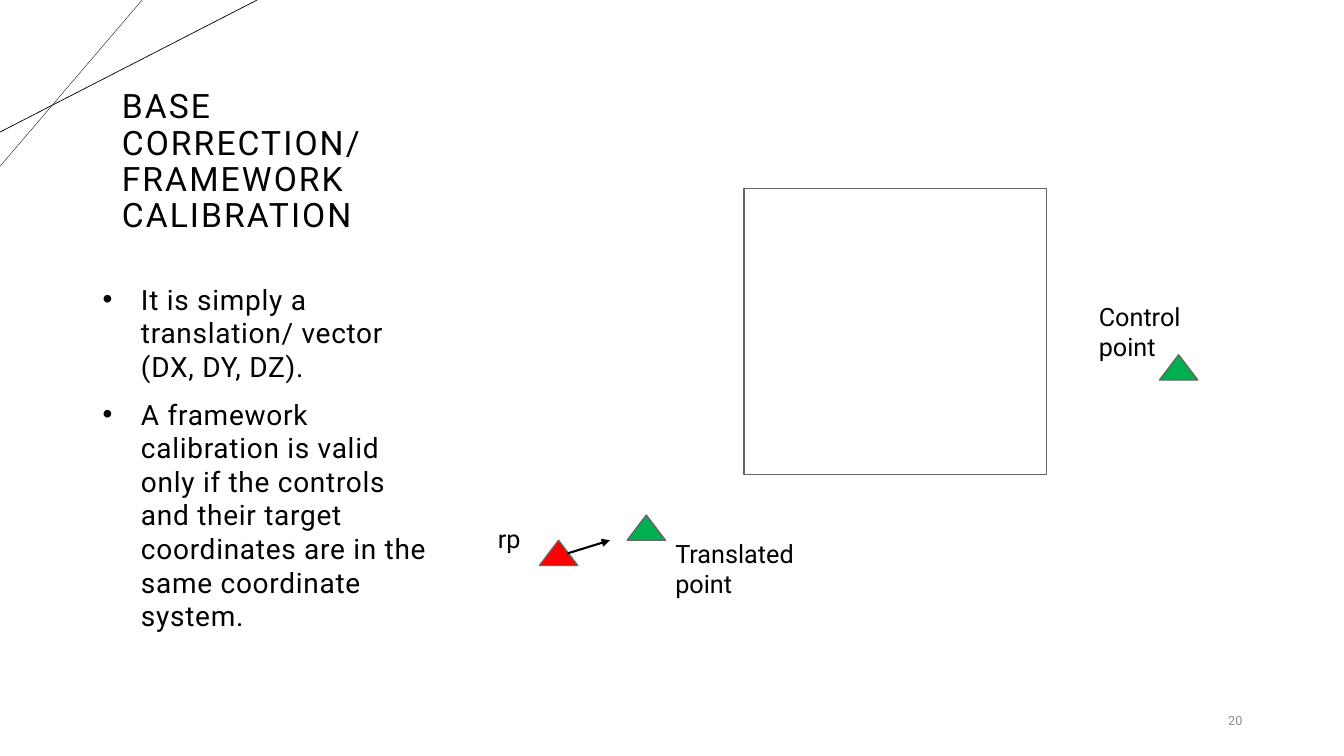
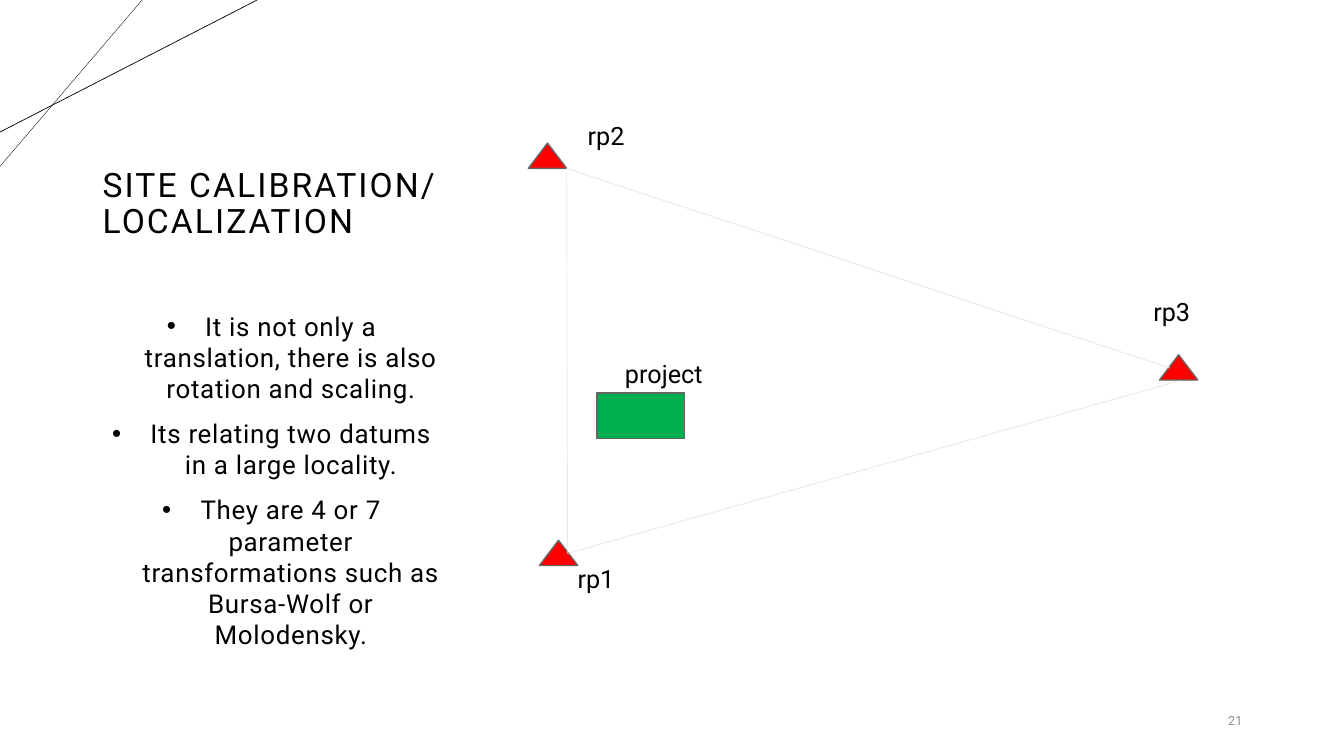
from lxml import etree
from pptx import Presentation
from pptx import util as u
from pptx.dml.color import RGBColor
from pptx.enum import shapes, text
from pptx.oxml import ns

BLACK = RGBColor(0x00, 0x00, 0x00)
WHITE = RGBColor(0xFF, 0xFF, 0xFF)
RED = RGBColor(0xFF, 0x00, 0x00)
GREEN = RGBColor(0x00, 0xB0, 0x50)
OUTLINE = RGBColor(0x66, 0x65, 0x62)
PALE = RGBColor(0xE9, 0xE6, 0xDF)
GRAY = RGBColor(0x8C, 0x8C, 0x8C)
FONT = "Roboto"
LEFT = text.PP_ALIGN.LEFT
CENTER = text.PP_ALIGN.CENTER
RIGHT = text.PP_ALIGN.RIGHT
TOP = text.MSO_ANCHOR.TOP
MIDDLE = text.MSO_ANCHOR.MIDDLE
TRIANGLE = shapes.MSO_SHAPE.ISOSCELES_TRIANGLE
RECTANGLE = shapes.MSO_SHAPE.RECTANGLE


def write(frame, lines, size=18, color=BLACK, align=LEFT, anchor=TOP,
          spacing=0, line_spacing=None, gap=0, bullet=None):
    """Fill a text frame with one formatted paragraph per line."""
    frame.word_wrap = True
    frame.vertical_anchor = anchor
    for index, line in enumerate(lines):
        para = frame.add_paragraph() if index else frame.paragraphs[0]
        if bullet:
            properties = para._p.get_or_add_pPr()
            indent = u.Inches(0.38)
            properties.set("marL", str(indent))
            properties.set("indent", str(-indent))
            etree.SubElement(properties, ns.qn("a:buFont"), typeface="Arial")
            etree.SubElement(properties, ns.qn("a:buChar"), char=bullet)
        para.alignment = align
        para.line_spacing = line_spacing
        if index:
            para.space_before = u.Pt(gap)
        span = para.add_run()
        span.text = line
        span.font.name = FONT
        span.font.size = u.Pt(size)
        span.font.color.rgb = color
        if spacing:
            span._r.get_or_add_rPr().set("spc", str(int(spacing * 100)))


class SurveyDeck:
    """Hold the deck style and the slide being drawn."""

    def __init__(self):
        """Start an empty widescreen deck."""
        self.deck = Presentation()
        self.deck.slide_width = u.Inches(13.33)
        self.deck.slide_height = u.Inches(7.5)
        self.page = None

    def start(self, number, title, left, top):
        """Add a page with corner lines, a title and its number."""
        self.page = self.deck.slides.add_slide(self.deck.slide_layouts[6])
        self.line((1.41, 0), (0, 1.65), width=0.25)
        self.line((2.55, 0), (0, 1.31), width=0.5)
        self.text(left, top, 3.55, 2.1, [title], size=24, anchor=MIDDLE,
                  spacing=1.5, line_spacing=0.9)
        self.text(11.34, 6.95, 1.08, 0.4, [str(number)], size=9, color=GRAY,
                  align=RIGHT, anchor=MIDDLE)

    def text(self, left, top, width, height, lines, **style):
        """Add a text box and return it."""
        box = self.page.shapes.add_textbox(
            u.Inches(left), u.Inches(top), u.Inches(width), u.Inches(height))
        write(box.text_frame, lines, **style)
        return box

    def bullets(self, top, height, lines, **style):
        """Add the bulleted column under the title."""
        box = self.text(0.92, top, 3.55, height, lines, bullet="•", gap=10,
                        spacing=0.5, **style)
        box.text_frame.margin_top = 0

    def label(self, left, top, width, caption, height=0.4):
        """Add a caption beside a mark."""
        self.text(left, top, width, height, [caption])

    def shape(self, kind, left, top, width, height, fill):
        """Add an outlined preset shape."""
        shape = self.page.shapes.add_shape(
            kind, u.Inches(left), u.Inches(top), u.Inches(width), u.Inches(height))
        shape.shadow.inherit = False
        shape.fill.solid()
        shape.fill.fore_color.rgb = fill
        shape.line.color.rgb = OUTLINE
        shape.line.width = u.Pt(1)

    def point(self, left, top, fill=RED):
        """Add a triangular survey mark."""
        self.shape(TRIANGLE, left, top, 0.38, 0.25, fill)

    def line(self, start, end, color=BLACK, width=0.5, arrow=False):
        """Add a straight line, with an arrowhead at its end if asked."""
        line = self.page.shapes.add_connector(
            shapes.MSO_CONNECTOR.STRAIGHT, *map(u.Inches, start + end))
        line.line.color.rgb = color
        line.line.width = u.Pt(width)
        if arrow:
            etree.SubElement(line.line._get_or_add_ln(), ns.qn("a:tailEnd"),
                             type="triangle")
        etree.SubElement(line._element.spPr, ns.qn("a:effectLst"))


def base_correction(survey):
    """Draw the base correction slide."""
    survey.start(20, "BASE CORRECTION/ FRAMEWORK CALIBRATION", 1.11, 0.56)
    survey.bullets(2.8, 3.82, [
        "It is simply a translation/ vector (DX, DY, DZ).",
        "A framework calibration is valid only if the controls and their "
        "target coordinates are in the same coordinate system.",
    ], size=20)
    survey.point(5.35, 5.36)
    survey.shape(RECTANGLE, 7.38, 1.87, 3, 2.84, WHITE)
    survey.point(6.22, 5.11, GREEN)
    survey.point(11.5, 3.52, GREEN)
    survey.line((5.63, 5.49), (6.05, 5.36), width=1.5, arrow=True)
    survey.label(4.84, 5.14, 0.59, "rp")
    survey.label(6.6, 5.29, 1.7, "Translated point", height=0.71)
    survey.label(10.8, 2.94, 1.08, "Control point", height=0.71)


def site_calibration(survey):
    """Draw the site calibration slide."""
    survey.start(21, "SITE CALIBRATION/ LOCALIZATION", 0.92, 0.98)
    survey.bullets(3.08, 3.54, [
        "It is not only a translation, there is also rotation and scaling.",
        "Its relating two datums in a large locality.",
        "They are 4 or 7 parameter transformations such as Bursa-Wolf or "
        "Molodensky.",
    ], size=18.5, align=CENTER)
    survey.shape(RECTANGLE, 5.92, 3.9, 0.87, 0.45, GREEN)
    for left, top in ((5.35, 5.36), (5.24, 1.42), (11.5, 3.52)):
        survey.point(left, top)
    rp1, rp2 = (5.63, 5.49), (5.62, 1.67)
    for start, end in ((rp2, (11.6, 3.65)), (rp2, rp1), (rp1, (11.69, 3.78))):
        survey.line(start, end, color=PALE)
    survey.label(5.63, 5.54, 0.58, "rp1")
    survey.label(5.73, 1.14, 0.66, "rp2")
    survey.label(11.34, 2.89, 0.64, "rp3")
    survey.label(6.1, 3.51, 1.22, "project")


def main():
    """Build and save the deck."""
    survey = SurveyDeck()
    base_correction(survey)
    site_calibration(survey)
    survey.deck.save("out.pptx")


if __name__ == "__main__":
    main()
